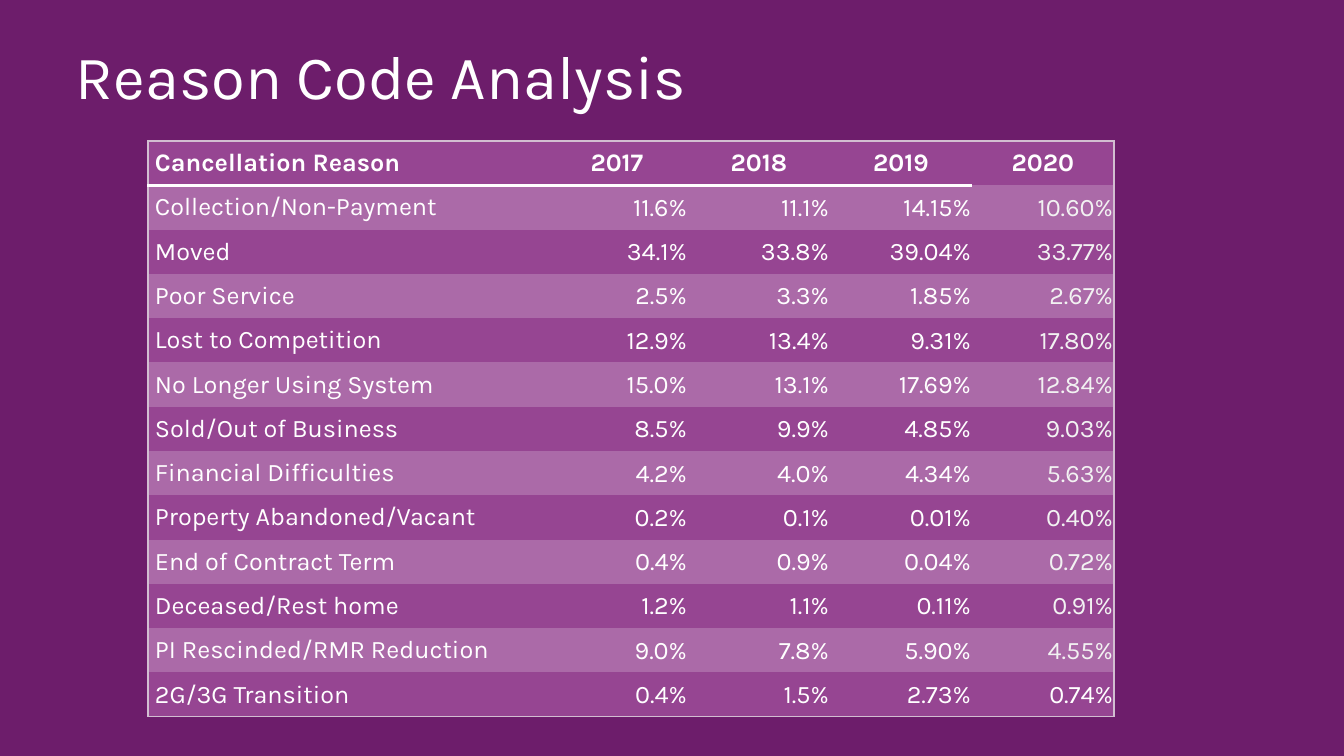
from lxml import etree
from pptx import Presentation
from pptx.dml.color import RGBColor
from pptx.enum.text import MSO_ANCHOR, PP_ALIGN
from pptx.oxml.ns import qn
from pptx.util import Pt

LEFT, CENTER, RIGHT = PP_ALIGN.LEFT, PP_ALIGN.CENTER, PP_ALIGN.RIGHT
MIDDLE, TOP = MSO_ANCHOR.MIDDLE, MSO_ANCHOR.TOP
SLIDE_W, SLIDE_H = 1344, 756
EMU_PER_PX = 12192000 / SLIDE_W
NO_STYLE = "{2D5ABB26-0587-4C30-8999-92F81FD0307C}"
FONT = "Karla"
COLORS = {
    "background": "6D1D6B",
    "row": "964592",
    "band": "AB6AA8",
    "frame": "D2BED1",
    "text": "FFFFFF",
    "latest": "F2F2F2",
}

HEADINGS = ("Cancellation Reason", "2017", "2018", "2019", "2020")
REASONS = [
    ("Collection/Non-Payment", "11.6%", "11.1%", "14.15%", "10.60%"),
    ("Moved", "34.1%", "33.8%", "39.04%", "33.77%"),
    ("Poor Service", "2.5%", "3.3%", "1.85%", "2.67%"),
    ("Lost to Competition", "12.9%", "13.4%", "9.31%", "17.80%"),
    ("No Longer Using System", "15.0%", "13.1%", "17.69%", "12.84%"),
    ("Sold/Out of Business", "8.5%", "9.9%", "4.85%", "9.03%"),
    ("Financial Difficulties", "4.2%", "4.0%", "4.34%", "5.63%"),
    ("Property Abandoned/Vacant", "0.2%", "0.1%", "0.01%", "0.40%"),
    ("End of Contract Term", "0.4%", "0.9%", "0.04%", "0.72%"),
    ("Deceased/Rest home", "1.2%", "1.1%", "0.11%", "0.91%"),
    ("PI Rescinded/RMR Reduction", "9.0%", "7.8%", "5.90%", "4.55%"),
    ("2G/3G Transition", "0.4%", "1.5%", "2.73%", "0.74%"),
]
COLUMN_WIDTHS = (398, 142, 142, 142, 142)
TABLE_LEFT, TABLE_TOP, TABLE_H = 148, 141, 576


def px(length):
    return round(length * EMU_PER_PX)


def set_text(paragraph, text, size, color, align=LEFT, bold=False):
    paragraph.text = text
    paragraph.alignment = align
    font = paragraph.font
    font.name, font.size, font.bold = FONT, Pt(size), bold
    font.color.rgb = RGBColor.from_string(COLORS[color])


prs = Presentation()
prs.slide_width, prs.slide_height = px(SLIDE_W), px(SLIDE_H)
slide = prs.slides.add_slide(prs.slide_layouts[6])
slide.background.fill.solid()
slide.background.fill.fore_color.rgb = RGBColor.from_string(COLORS["background"])

title = slide.shapes.add_textbox(px(66), px(33), px(948), px(145)).text_frame
title.word_wrap = True
title.vertical_anchor = TOP
set_text(title.paragraphs[0], "Reason Code Analysis", 44, "text")

rows = [HEADINGS, *REASONS]
last_row, last_col = len(rows) - 1, len(HEADINGS) - 1
table = slide.shapes.add_table(
    len(rows), len(HEADINGS), px(TABLE_LEFT), px(TABLE_TOP),
    px(sum(COLUMN_WIDTHS)), px(TABLE_H)).table
table.horz_banding = False
table._tbl.tblPr.find(qn("a:tableStyleId")).text = NO_STYLE
for column, width in zip(table.columns, COLUMN_WIDTHS):
    column.width = px(width)

for r, values in enumerate(rows):
    table.rows[r].height = px(TABLE_H / len(rows))
    for c, value in enumerate(values):
        cell = table.cell(r, c)
        is_heading, is_label = r == 0, c == 0
        is_figure = not is_heading and not is_label
        cell.vertical_anchor = MIDDLE
        cell.margin_left = cell.margin_right = px(1 if is_figure else 7)
        cell.margin_top = px(1 if is_figure else 4)
        cell.margin_bottom = px(0 if is_figure else 4)

        align = LEFT if is_label else CENTER if is_heading else RIGHT
        is_latest = is_figure and c == last_col and r < last_row
        set_text(cell.text_frame.paragraphs[0], value, 18,
                 "latest" if is_latest else "text", align, bold=is_heading)

        # Outer frame, plus a white rule under the headings up to 2019
        borders = {}
        if c == 0:
            borders["lnL"] = ("frame", 1)
        if c == last_col:
            borders["lnR"] = ("frame", 1)
        if is_heading:
            borders["lnT"] = ("frame", 1)
        if is_heading and c < last_col:
            borders["lnB"] = ("text", 2)
        if r == last_row:
            borders["lnB"] = ("frame", 1)
        properties = cell._tc.get_or_add_tcPr()
        for side, (color, points) in borders.items():
            line = etree.SubElement(properties, qn(f"a:{side}"), w=str(Pt(points)))
            line_fill = etree.SubElement(line, qn("a:solidFill"))
            etree.SubElement(line_fill, qn("a:srgbClr"), val=COLORS[color])

        cell.fill.solid()
        cell.fill.fore_color.rgb = RGBColor.from_string(COLORS["band" if r % 2 else "row"])

prs.save("out.pptx")
